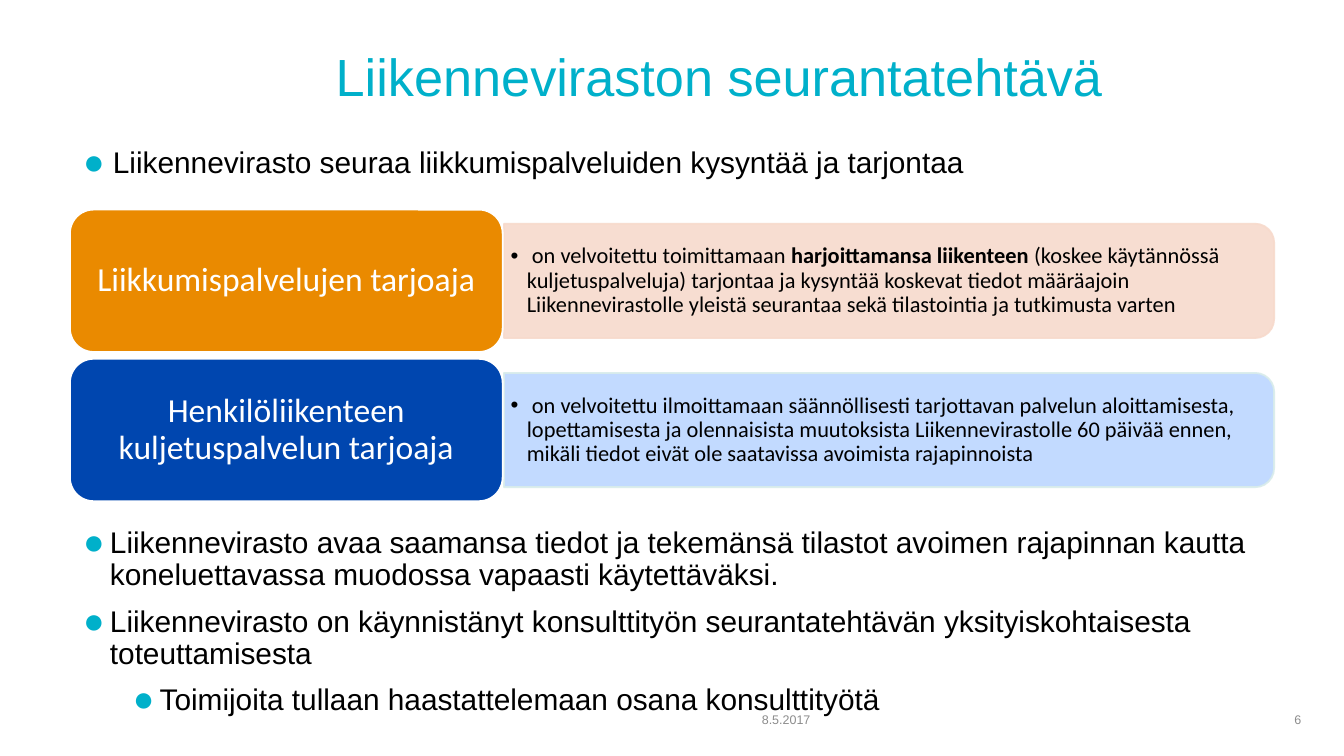
from dataclasses import dataclass

from lxml import etree
from pptx import Presentation
from pptx.dml.color import RGBColor
from pptx.enum.shapes import MSO_SHAPE
from pptx.enum.text import MSO_ANCHOR, MSO_AUTO_SIZE, PP_ALIGN
from pptx.oxml.ns import qn
from pptx.util import Inches, Pt

ROUND_RECT = MSO_SHAPE.ROUNDED_RECTANGLE
ROUND_TOP = MSO_SHAPE.ROUND_2_SAME_RECTANGLE
TOP, MIDDLE = MSO_ANCHOR.TOP, MSO_ANCHOR.MIDDLE
CENTER, RIGHT = PP_ALIGN.CENTER, PP_ALIGN.RIGHT
GROW = MSO_AUTO_SIZE.SHAPE_TO_FIT_TEXT

WHITE = RGBColor(0xFF, 0xFF, 0xFF)
BLACK = RGBColor(0x00, 0x00, 0x00)
TEAL = RGBColor(0x00, 0xB0, 0xCA)
GREY = RGBColor(0x8C, 0x8C, 0x8C)
ORANGE = RGBColor(0xEA, 0x8A, 0x00)
PEACH = RGBColor(0xF7, 0xDA, 0xCC)
BLUE = RGBColor(0x00, 0x46, 0xAF)
PALE_BLUE = RGBColor(0xBC, 0xD7, 0xFF)
PALE_GREEN = RGBColor(0xD9, 0xEC, 0xEA)

LEFT = 0.52
LABEL_W, LABEL_H = 3.22, 1.06
PANEL_W, PANEL_H = 5.73, 0.85
ROW_TOP, ROW_STEP = 1.56, 1.11


@dataclass
class Style:
    size: float
    color: RGBColor = BLACK
    font: str = "Arial"


@dataclass
class Bullet:
    char: str
    indent: float
    hang: float
    color: RGBColor | None = None
    percent: int = 100


@dataclass
class Para:
    """A paragraph as (text, bold) pieces."""
    pieces: list[tuple[str, bool]]
    bullet: Bullet | None = None
    level: int = 0


@dataclass
class Duty:
    provider: str
    pieces: list[tuple[str, bool]]
    color: RGBColor
    panel: RGBColor
    panel_line: RGBColor


DUTIES = [
    Duty("Liikkumispalvelujen tarjoaja",
         [(" on velvoitettu toimittamaan ", False),
          ("harjoittamansa liikenteen ", True),
          ("(koskee käytännössä kuljetuspalveluja) tarjontaa ja kysyntää koskevat "
           "tiedot määräajoin Liikennevirastolle yleistä seurantaa sekä tilastointia "
           "ja tutkimusta varten", False)],
         ORANGE, PEACH, PEACH),
    Duty("Henkilöliikenteen kuljetuspalvelun tarjoaja",
         [(" on velvoitettu ilmoittamaan säännöllisesti tarjottavan palvelun "
           "aloittamisesta, lopettamisesta ja olennaisista muutoksista "
           "Liikennevirastolle 60 päivää ennen, mikäli tiedot eivät ole saatavissa "
           "avoimista rajapinnoista", False)],
         BLUE, PALE_BLUE, PALE_GREEN),
]

INTRO = Para([(" Liikennevirasto seuraa liikkumispalveluiden kysyntää ja tarjontaa", False)],
             Bullet("●", 0.15, 0.15, TEAL, 120))
MAIN_BULLET = Bullet("●", 0.2, 0.2, TEAL, 120)
SUB_BULLET = Bullet("●", 0.57, 0.2, TEAL, 120)
PANEL_BULLET = Bullet("•", 0.12, 0.12)
NEXT_STEPS = [
    Para([("Liikennevirasto avaa saamansa tiedot ja tekemänsä tilastot avoimen rajapinnan "
           "kautta koneluettavassa muodossa vapaasti käytettäväksi.", False)], MAIN_BULLET),
    Para([("Liikennevirasto on käynnistänyt konsulttityön seurantatehtävän "
           "yksityiskohtaisesta toteuttamisesta", False)], MAIN_BULLET),
    Para([("Toimijoita tullaan haastattelemaan osana konsulttityötä", False)], SUB_BULLET, 1),
]


def add_bullet(p, bullet: Bullet) -> None:
    pPr = p._p.get_or_add_pPr()
    pPr.set("marL", str(Inches(bullet.indent)))
    pPr.set("indent", str(-Inches(bullet.hang)))
    if bullet.color is not None:
        clr = etree.SubElement(pPr, qn("a:buClr"))
        etree.SubElement(clr, qn("a:srgbClr"), val=str(bullet.color))
    etree.SubElement(pPr, qn("a:buSzPct"), val=str(bullet.percent * 1000))
    etree.SubElement(pPr, qn("a:buFont"), typeface="Arial")
    etree.SubElement(pPr, qn("a:buChar"), char=bullet.char)


def add_text(slide, box: tuple[float, float, float, float], paras: list[Para], style: Style,
             anchor=TOP, align=None, inset: tuple[float, float] = (0.1, 0.05)):
    """Add a wrapped text box; inset is (horizontal, vertical) in inches."""
    sp = slide.shapes.add_textbox(*map(Inches, box))
    tf = sp.text_frame
    tf.word_wrap = True
    tf.vertical_anchor = anchor
    tf.margin_left = tf.margin_right = Inches(inset[0])
    tf.margin_top = tf.margin_bottom = Inches(inset[1])
    for i, para in enumerate(paras):
        p = tf.add_paragraph() if i else tf.paragraphs[0]
        if para.bullet:
            add_bullet(p, para.bullet)
        p.level = para.level
        p.line_spacing = 0.9
        p.space_before = Pt(7.5 if i else 0)
        if align is not None:
            p.alignment = align
        for text, bold in para.pieces:
            r = p.add_run()
            r.text = text
            r.font.name = style.font
            r.font.size = Pt(style.size)
            r.font.color.rgb = style.color
            r.font.bold = bold
    return sp


def add_block(slide, kind, box: tuple[float, float, float, float],
              fill: RGBColor, line: RGBColor):
    sp = slide.shapes.add_shape(kind, *map(Inches, box))
    sp.shadow.inherit = False
    sp.fill.solid()
    sp.fill.fore_color.rgb = fill
    sp.line.color.rgb = line
    sp.line.width = Pt(1)
    return sp


def set_opacity(sp, percent: int) -> None:
    """Apply the opacity to both fill and line."""
    for clr in sp._element.spPr.iter(qn("a:srgbClr")):
        etree.SubElement(clr, qn("a:alpha"), val=str(percent * 1000))


def add_duty(slide, duty: Duty, top: float) -> None:
    panel_left = LEFT + LABEL_W + 0.01
    middle = top + LABEL_H / 2
    # The panel is an upright shape turned a quarter around its centre.
    panel = add_block(slide, ROUND_TOP,
                      (panel_left + (PANEL_W - PANEL_H) / 2, middle - PANEL_W / 2,
                       PANEL_H, PANEL_W), duty.panel, duty.panel_line)
    panel.rotation = 90
    set_opacity(panel, 90)
    add_text(slide, (panel_left, middle - 0.38, 5.69, 0.76),
             [Para(duty.pieces, PANEL_BULLET, 1)], Style(12, BLACK, "Calibri"),
             MIDDLE, inset=(0.05, 0.03))
    add_block(slide, ROUND_RECT, (LEFT, top, LABEL_W, LABEL_H), duty.color, WHITE)
    add_text(slide, (LEFT + 0.05, top + 0.05, LABEL_W - 0.1, LABEL_H - 0.1),
             [Para([(duty.provider, False)])], Style(18, WHITE, "Calibri"),
             MIDDLE, CENTER, (0.07, 0.04))


def main() -> None:
    prs = Presentation()
    prs.slide_width = Inches(10)
    prs.slide_height = Inches(10 * 9 / 16)
    slide = prs.slides.add_slide(prs.slide_layouts[6])

    add_text(slide, (2.4, 0.34, 7.24, 0.5),
             [Para([("Liikenneviraston seurantatehtävä", False)])], Style(28, TEAL), MIDDLE)
    add_text(slide, (LEFT, 1.05, 8.74, 0.63), [INTRO], Style(16))
    for left, width, text in ((5.22, 0.91, "8.5.2017"), (9.37, 0.41, "6")):
        add_text(slide, (left, 5.21, width, 0.3), [Para([(text, False)])],
                 Style(6.75, GREY), MIDDLE, RIGHT)
    for i, duty in enumerate(DUTIES):
        add_duty(slide, duty, ROW_TOP + i * ROW_STEP)
    steps = add_text(slide, (LEFT, 3.88, 9.76, 1.84), NEXT_STEPS, Style(16))
    steps.text_frame.auto_size = GROW

    prs.save("out.pptx")


if __name__ == "__main__":
    main()
